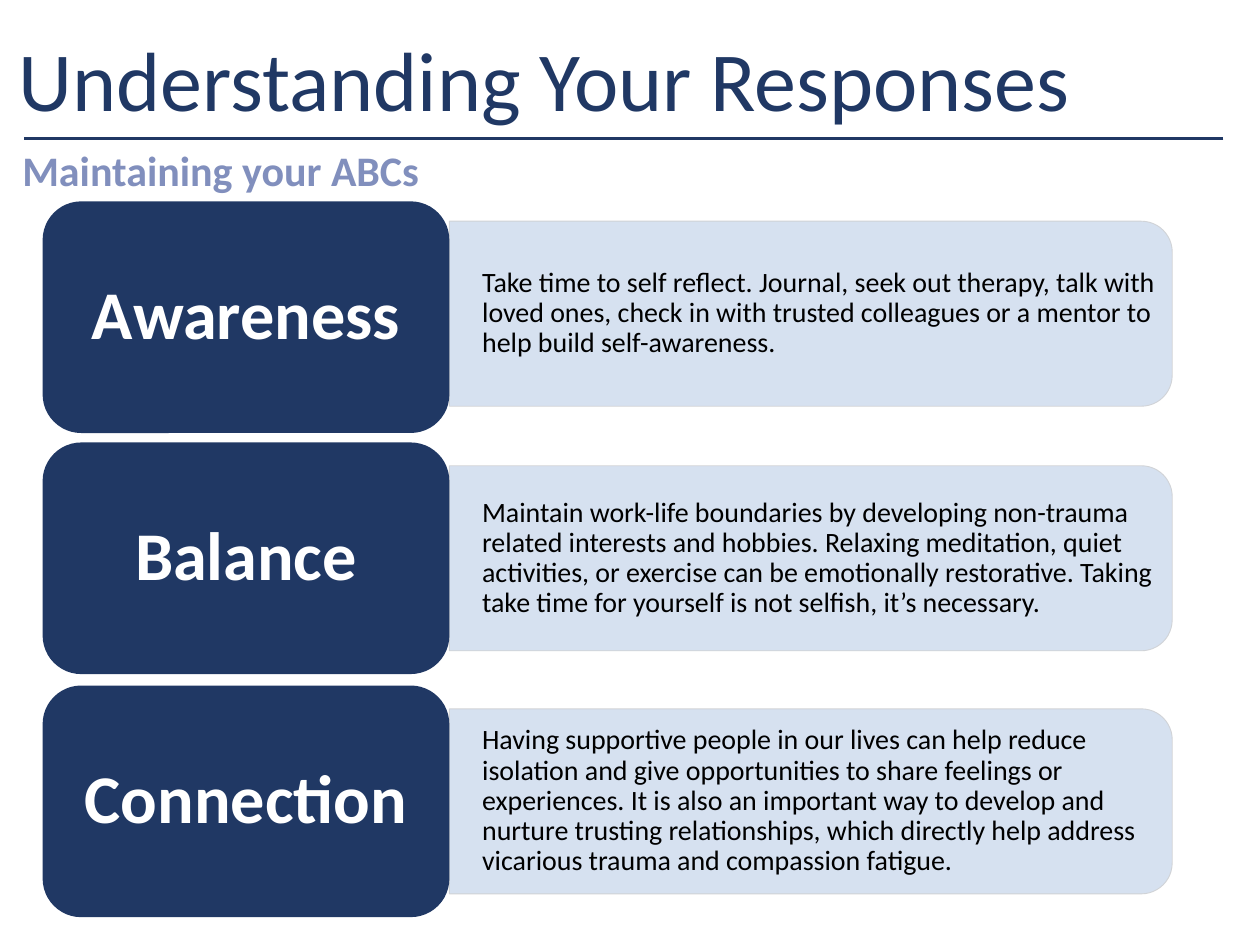
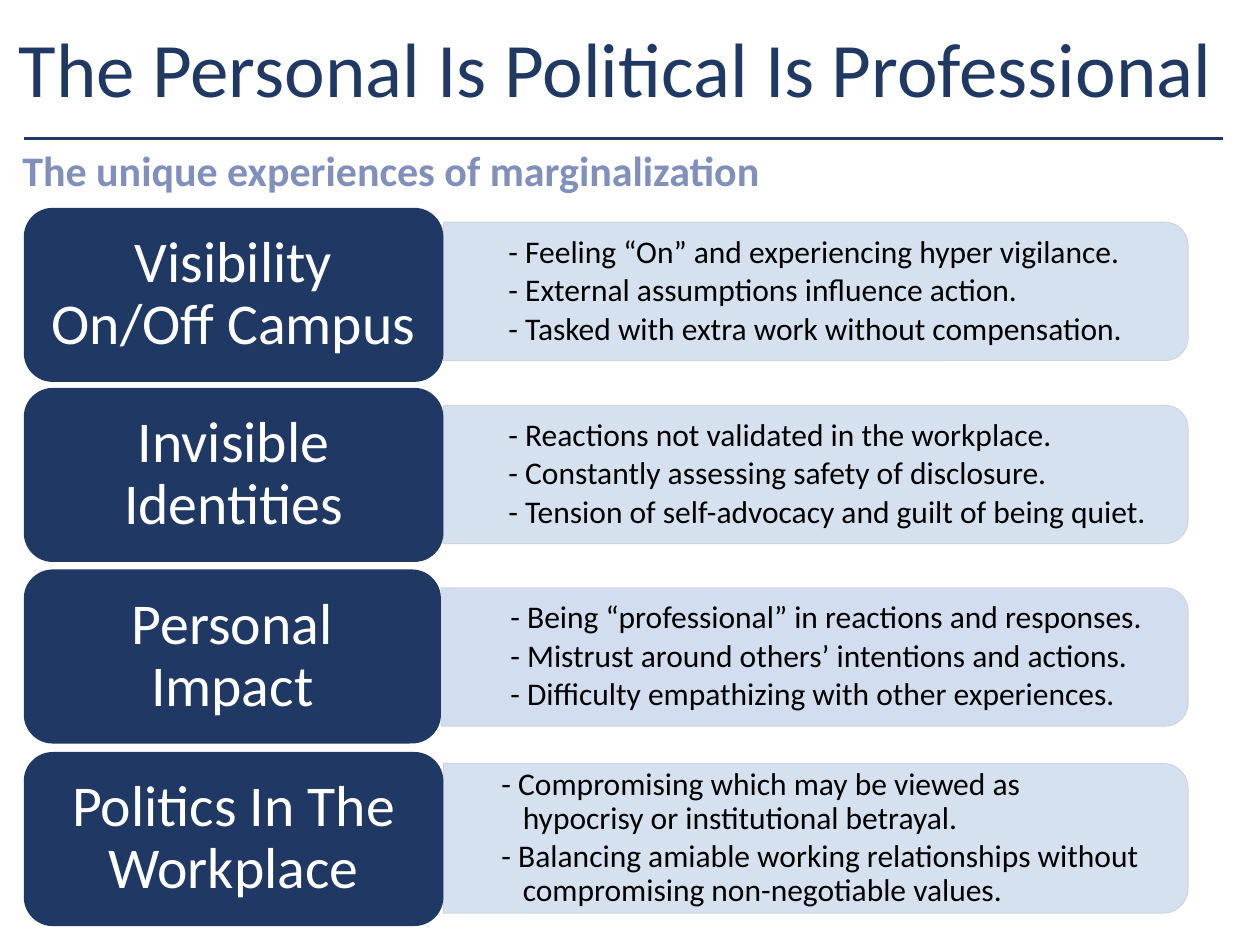
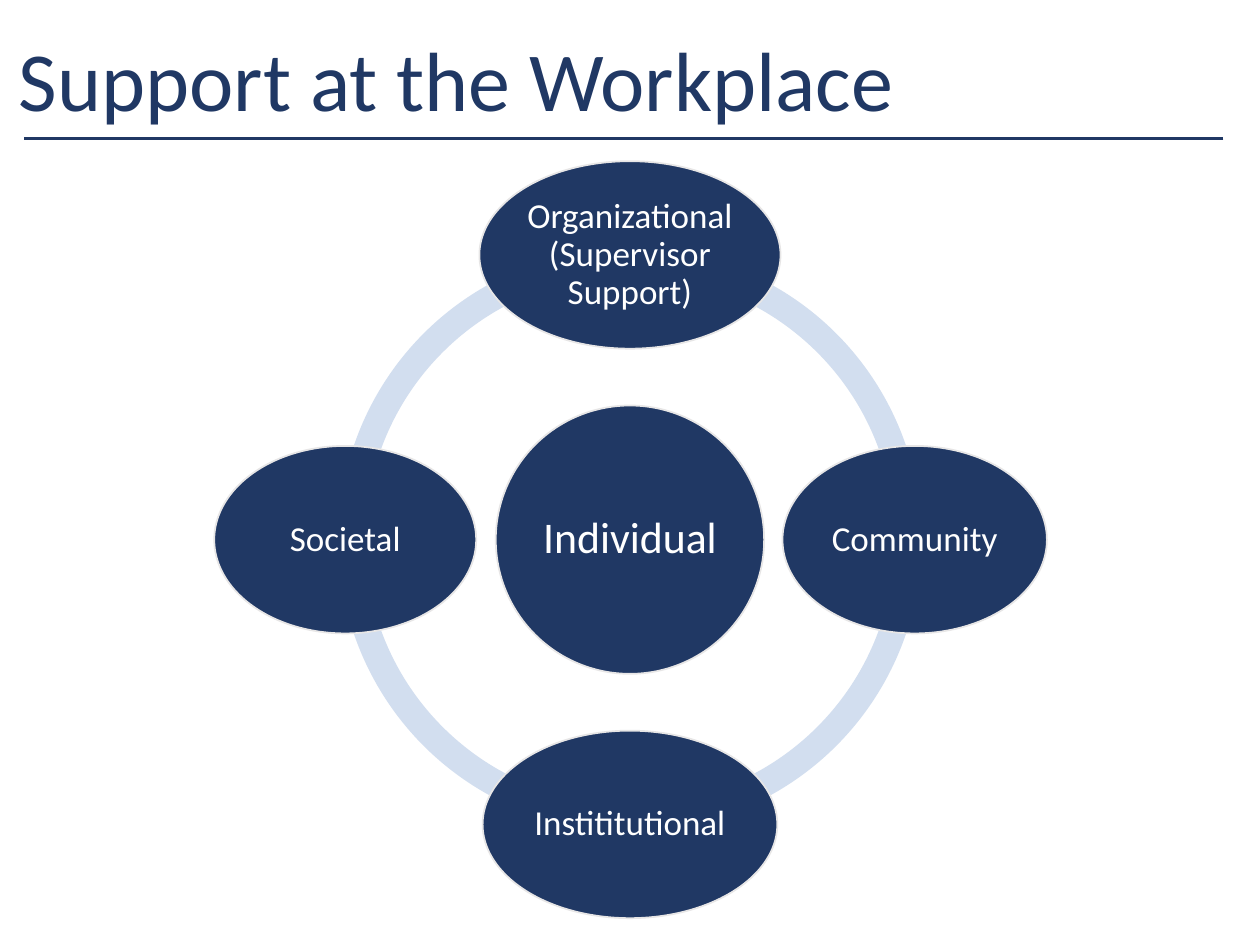
from lxml.etree import SubElement
from pptx import Presentation
from pptx.dml.color import RGBColor
from pptx.enum.shapes import MSO_CONNECTOR as CONN, MSO_SHAPE as SHAPE
from pptx.enum.text import MSO_ANCHOR as ANCHOR, PP_ALIGN as ALIGN
from pptx.oxml.ns import qn
from pptx.util import Cm, Pt

NAVY = RGBColor(0x20, 0x38, 0x64)
PERIWINKLE = RGBColor(0x81, 0x8F, 0xBD)
PALE = RGBColor(0xD2, 0xDE, 0xEF)
EDGE = RGBColor(0xCF, 0xD1, 0xD4)
RIM = RGBColor(0xE7, 0xE6, 0xE6)
WHITE = RGBColor(0xFF, 0xFF, 0xFF)
BLACK = RGBColor(0, 0, 0)

FONT = "Calibri"
TITLE = {"size": Pt(48), "color": NAVY}
LONG_TITLE = {"size": Pt(44), "color": NAVY}
SUBTITLE = {"size": Pt(24), "color": PERIWINKLE, "bold": True}
ABC_LABEL = {"size": Pt(39), "color": WHITE, "bold": True}
THEME_LABEL = {"size": Pt(33), "color": WHITE}
HUB = {"size": Pt(25), "color": WHITE}
NODE = {"size": Pt(20), "color": WHITE}

ABC_ROWS = [
    (4.06, 4.46, "Awareness",
     "Take time to self reflect. Journal, seek out therapy, talk with loved ones, "
     "check in with trusted colleagues or a mentor to help build self-awareness."),
    (8.92, 9.39, "Balance",
     "Maintain work-life boundaries by developing non-trauma related interests and "
     "hobbies. Relaxing meditation, quiet activities, or exercise can be emotionally "
     "restorative. Taking take time for yourself is not selfish, it’s necessary."),
    (13.82, 14.29, "Connection",
     "Having supportive people in our lives can help reduce isolation and give "
     "opportunities to share feelings or experiences. It is also an important way to "
     "develop and nurture trusting relationships, which directly help address "
     "vicarious trauma and compassion fatigue."),
]

THEME_ROWS = [
    ((4.19, 8.46), (4.48, 2.79), (0.62, 0), 90, "Visibility On/Off Campus",
     ["- Feeling “On” and experiencing hyper vigilance.",
      "- External assumptions influence action.",
      "- Tasked with extra work without compensation."]),
    ((7.82, 8.46), (8.17, 2.79), (0.62, 0), 90, "Invisible Identities",
     ["- Reactions not validated in the workplace.",
      "- Constantly assessing safety of disclosure.",
      "- Tension of self-advocacy and guilt of being quiet."]),
    ((11.48, 8.41), (11.85, 2.79), (0.71, 0), 100, "Personal Impact",
     ["- Being “professional” in reactions and responses.",
      "- Mistrust around others’ intentions and actions.",
      "- Difficulty empathizing with other experiences."]),
    ((15.16, 8.46), (15.39, 3.02), (0.91, -0.43), 90, "Politics In The Workplace",
     ["- Compromising which may be viewed as\vhypocrisy or institutional betrayal.",
      "- Balancing amiable working relationships without\v"
      "compromising non-negotiable values."]),
]

NODES = [
    ("Organizational (Supervisor Support)", 6.07, 0, -1),
    ("Community", 5.33, 1, 0),
    ("Instititutional", 5.94, 0, 1),
    ("Societal", 5.28, -1, 0),
]


def write(tf, lines, fmt, insets, align=ALIGN.LEFT, anchor=ANCHOR.MIDDLE,
          indent=(0, 0), after=0):
    frame = {"word_wrap": True, "vertical_anchor": anchor}
    sides = ("margin_left", "margin_top", "margin_right", "margin_bottom")
    frame.update(zip(sides, map(Cm, insets)))
    for name, value in frame.items():
        setattr(tf, name, value)
    for i, line in enumerate(lines):
        p = tf.paragraphs[0] if i == 0 else tf.add_paragraph()
        p.text = line
        p.alignment, p.line_spacing, p.space_after = align, 0.9, Pt(after)
        pPr = p._p.get_or_add_pPr()
        pPr.set("marL", str(Cm(indent[0])))
        pPr.set("indent", str(Cm(indent[1])))
        for r in p.runs:
            r.font.name = FONT
            for name, value in fmt.items():
                if name == "color":
                    r.font.color.rgb = value
                else:
                    setattr(r.font, name, value)


def add_text(s, box, lines, fmt, insets=(0.25, 0.13, 0.25, 0.13), **layout):
    tb = s.shapes.add_textbox(*map(Cm, box))
    write(tb.text_frame, lines, fmt, insets, **layout)


def add_block(s, kind, box, fill, line=None, width=1):
    sp = s.shapes.add_shape(kind, *map(Cm, box))
    sp.shadow.inherit = False
    sp.fill.solid()
    sp.fill.fore_color.rgb = fill
    if line is None:
        sp.line.fill.background()
    else:
        sp.line.color.rgb = line
        sp.line.width = Pt(width)
    return sp


def set_opacity(parent, percent):
    color = parent.find(qn("a:solidFill")).find(qn("a:srgbClr"))
    SubElement(color, qn("a:alpha")).set("val", str(percent * 1000))


def add_header(s, title, fmt=TITLE, top=0.75, subtitle=None):
    rule = s.shapes.add_connector(CONN.STRAIGHT, Cm(24.66), Cm(2.79), Cm(0.48), Cm(2.79))
    rule.line.color.rgb = NAVY
    rule.line.width = Pt(1.75)
    SubElement(rule._element.spPr, qn("a:effectLst"))
    add_text(s, (0.13, top, 25.27, 1.9), [title], fmt)
    if subtitle:
        add_text(s, (0.2, 2.9, 19.5, 1.42), [subtitle], SUBTITLE, anchor=ANCHOR.TOP)


def add_label(s, box, text, fmt):
    sp = add_block(s, SHAPE.ROUNDED_RECTANGLE, box, NAVY)
    write(sp.text_frame, [text], fmt, (0.38, 0.19, 0.38, 0.19), ALIGN.CENTER)


def add_panel(s, box, lines, size, insets, indent, opacity=90):
    x, y, w, h = box
    upright = (x + (w - h) / 2, y + (h - w) / 2, h, w)
    sp = add_block(s, SHAPE.ROUND_2_SAME_RECTANGLE, upright, PALE, EDGE, 0.5)
    sp.rotation = 90
    set_opacity(sp._element.spPr, opacity)
    set_opacity(sp._element.spPr.find(qn("a:ln")), 90)
    fmt = {"size": Pt(size), "color": BLACK}
    add_text(s, box, lines, fmt, insets, indent=indent, after=2.5)


def add_ellipse(s, cx, cy, w, h, text, fmt):
    sp = add_block(s, SHAPE.OVAL, (cx - w / 2, cy - h / 2, w, h), NAVY, RIM)
    write(sp.text_frame, [text], fmt, (0.05,) * 4, ALIGN.CENTER)


def add_ring(s, cx, cy, diameter):
    box = (cx - diameter / 2, cy - diameter / 2, diameter, diameter)
    for quarter in range(4):
        arc = add_block(s, SHAPE.BLOCK_ARC, box, PALE)
        values = (quarter * 54, (quarter + 1) % 4 * 54, 0.046)
        for i, value in enumerate(values):
            arc.adjustments[i] = value


def build_responses(s):
    add_header(s, "Understanding Your Responses", subtitle="Maintaining your ABCs")
    left, width, right = 0.86, 8.2, 23.63
    for label_top, panel_top, label, text in ABC_ROWS:
        x = left + width
        add_panel(s, (x, panel_top, right - x, 3.73), [text], 16,
                  (0.18, 0.08, 0.34, 0.08), (0.48, 0))
        add_label(s, (left, label_top, width, 4.67), label, ABC_LABEL)


def build_political(s):
    add_header(s, "The Personal Is Political Is Professional", LONG_TITLE, 0.51,
               "The unique experiences of marginalization")
    left, right = 0.48, 23.95
    for (top, width), (panel_top, height), indent, opacity, label, lines in THEME_ROWS:
        x = left + width
        add_panel(s, (x, panel_top, right - x, height), lines, 18,
                  (0.69, 0.08, 0.7, 0.08), indent, opacity)
        add_label(s, (left, top, width, 3.51), label, THEME_LABEL)


def build_support(s):
    add_header(s, "Support at the Workplace")
    cx, cy, orbit = 12.7, 10.88, 5.74
    add_ring(s, cx, cy, 11.76)
    add_ellipse(s, cx, cy, 5.41, 5.41, "Individual", HUB)
    for text, width, dx, dy in NODES:
        add_ellipse(s, cx + dx * orbit, cy + dy * orbit, width, 3.78, text, NODE)


def main():
    prs = Presentation()
    prs.slide_width, prs.slide_height = Cm(25.4), Cm(19.05)
    for build in (build_responses, build_political, build_support):
        build(prs.slides.add_slide(prs.slide_layouts[6]))
    prs.save("out.pptx")


if __name__ == "__main__":
    main()
